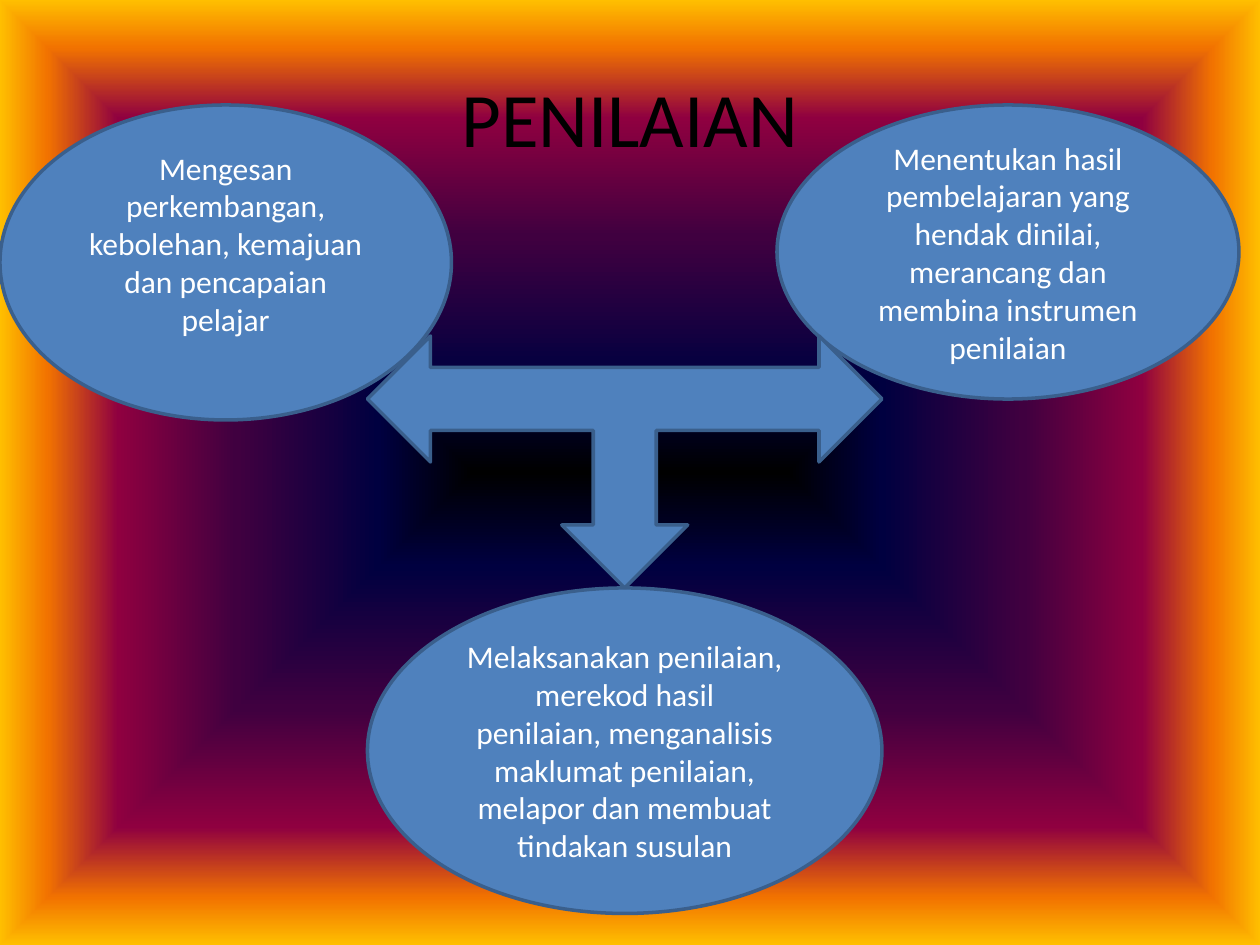
from pptx import Presentation
from pptx.dml.color import RGBColor
from pptx.enum.shapes import MSO_SHAPE
from pptx.enum.text import MSO_ANCHOR, PP_ALIGN
from pptx.oxml import parse_xml
from pptx.oxml.ns import nsdecls, qn
from pptx.util import Pt

BLUE = RGBColor(0x4F, 0x81, 0xBD)
OUTLINE = RGBColor(0x3A, 0x5F, 0x8C)
WHITE = RGBColor(0xFF, 0xFF, 0xFF)
BLACK = RGBColor(0x00, 0x00, 0x00)
FONT = "Calibri"
LINE_HEIGHT = 22

# Gradient from the centre of the page to its edges: percent, colour
GLOW = [
    (0, BLACK),
    (20, RGBColor(0x00, 0x00, 0x40)),
    (50, RGBColor(0x40, 0x00, 0x40)),
    (75, RGBColor(0x8F, 0x00, 0x40)),
    (90, RGBColor(0xF2, 0x73, 0x00)),
    (100, RGBColor(0xFF, 0xBF, 0x00)),
]

# Boxes: left, top, width, height in points
TITLE_BOX = (36, 21.6, 648, 90)
ARROW_BOX = (210, 192, 294, 144)
# Each bubble: box, text, free lines below the text
BUBBLES = [
    ((0, 60, 258, 180),
     "Mengesan perkembangan, kebolehan, kemajuan dan pencapaian pelajar", 1),
    ((444, 60, 264, 168),
     "Menentukan hasil pembelajaran yang\nhendak dinilai, merancang dan "
     "membina instrumen\npenilaian", 0),
    ((210, 336, 294, 186),
     "Melaksanakan penilaian, merekod hasil\npenilaian, menganalisis maklumat "
     "penilaian, melapor dan membuat tindakan susulan", 0),
]


def paint_background(page):
    page.background.fill.gradient()
    stops = "".join(
        f'<a:gs pos="{percent * 1000}"><a:srgbClr val="{color}"/></a:gs>'
        for percent, color in GLOW)
    glow = parse_xml(
        f'<a:gradFill {nsdecls("a")} rotWithShape="1"><a:gsLst>{stops}</a:gsLst>'
        '<a:path path="shape"><a:fillToRect l="50000" t="50000" r="50000" '
        'b="50000"/></a:path></a:gradFill>')
    linear = next(page.element.iter(qn("a:gradFill")))
    linear.getparent().replace(linear, glow)


def write_text(shape, text, size, color):
    frame = shape.text_frame
    frame.word_wrap = True
    frame.vertical_anchor = MSO_ANCHOR.MIDDLE
    para = frame.paragraphs[0]
    para.text = text
    para.alignment = PP_ALIGN.CENTER
    para.font.name = FONT
    para.font.size = Pt(size)
    para.font.color.rgb = color


def add_title(page, box, text):
    write_text(page.shapes.add_textbox(*map(Pt, box)), text, 44, BLACK)


def add_blue_shape(page, kind, box):
    shape = page.shapes.add_shape(kind, *map(Pt, box))
    shape.shadow.inherit = False
    shape.fill.solid()
    shape.fill.fore_color.rgb = BLUE
    shape.line.color.rgb = OUTLINE
    shape.line.width = Pt(2)
    return shape


def add_bubble(page, box, text, free_lines):
    bubble = add_blue_shape(page, MSO_SHAPE.OVAL, box)
    write_text(bubble, text, 18, WHITE)
    bubble.text_frame.margin_bottom = Pt(3.6 + free_lines * LINE_HEIGHT)


def add_three_way_arrow(page, box):
    arrow = add_blue_shape(page, MSO_SHAPE.LEFT_RIGHT_UP_ARROW, box)
    arrow.rotation = 180


def main():
    deck = Presentation()
    deck.slide_width, deck.slide_height = Pt(720), Pt(540)
    page = deck.slides.add_slide(deck.slide_layouts[6])

    paint_background(page)
    add_title(page, TITLE_BOX, "PENILAIAN")
    for box, text, free_lines in BUBBLES:
        add_bubble(page, box, text, free_lines)
    # The arrow lies over the bubbles
    add_three_way_arrow(page, ARROW_BOX)

    deck.save("out.pptx")


if __name__ == "__main__":
    main()
